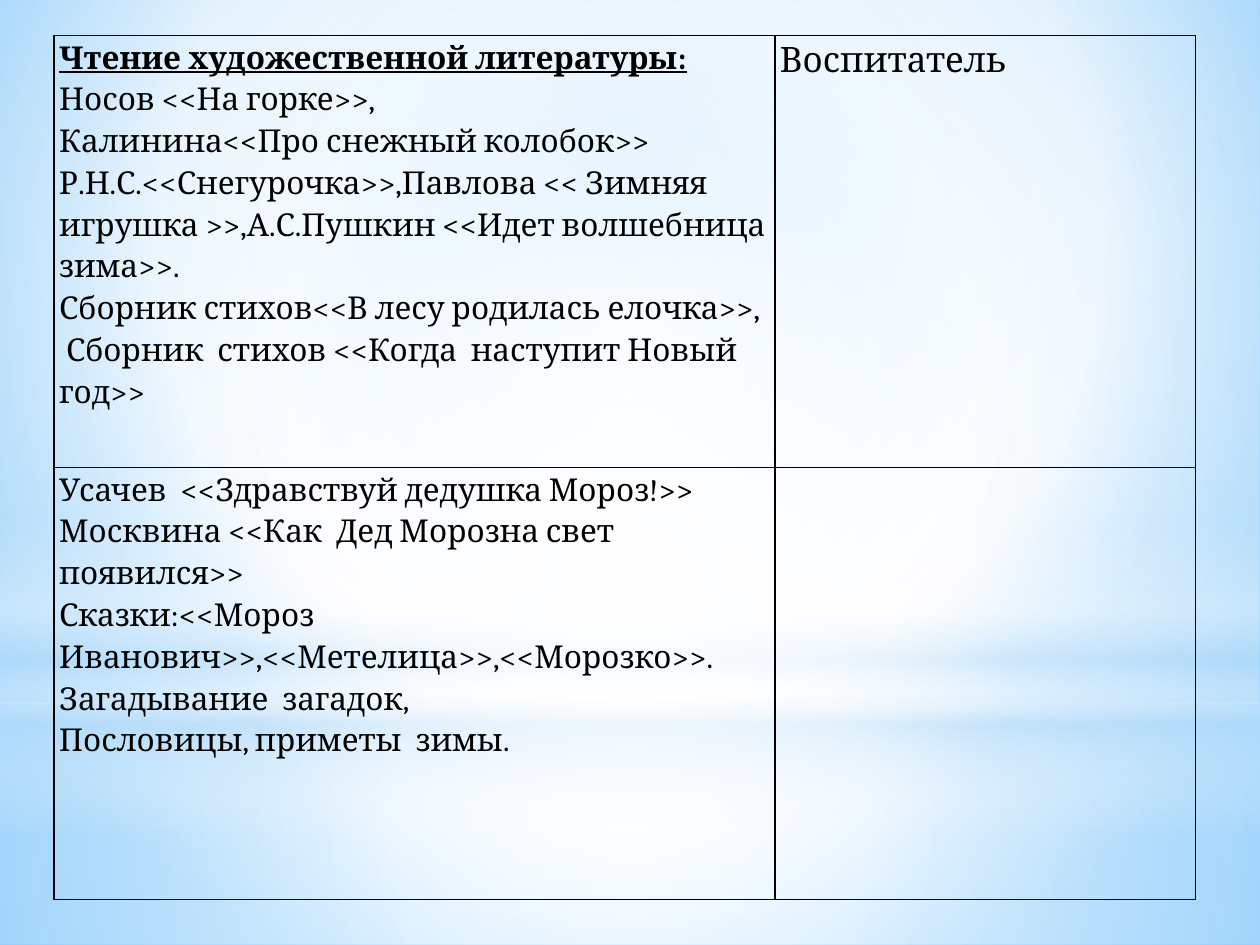
from dataclasses import dataclass

from lxml.etree import SubElement
from pptx import Presentation
from pptx.dml.color import RGBColor
from pptx.enum.shapes import MSO_SHAPE
from pptx.oxml.ns import qn
from pptx.util import Inches, Pt


@dataclass(frozen=True)
class Theme:
    font: str = "Cambria"
    body_size: int = 18
    role_size: int = 20
    ink: str = "000000"
    white: str = "FFFFFF"
    haze: str = "B4DCFA"
    sky: str = "9ED5FF"
    deep_sky: str = "5BB9FF"
    border_width: int = 1


THEME = Theme()
CENTRE = (50, 50, 50, 50)

READING_HEADING = "Чтение художественной литературы:"
READING_LIST = [
    READING_HEADING,
    "Носов <<На горке>>,",
    "Калинина<<Про снежный колобок>>",
    "Р.Н.С.<<Снегурочка>>,Павлова << Зимняя игрушка >>,"
    "А.С.Пушкин <<Идет волшебница зима>>.",
    "Сборник стихов<<В лесу родилась елочка>>,",
    " Сборник  стихов <<Когда  наступит Новый  год>>",
]
TALES_LIST = [
    "Усачев  <<Здравствуй дедушка Мороз!>>",
    "Москвина <<Как  Дед Морозна свет появился>>",
    "Сказки:<<Мороз Иванович>>,<<Метелица>>,<<Морозко>>.",
    "Загадывание  загадок,",
    "Пословицы, приметы  зимы.",
]


def set_gradient(fill, owner, stops, focus=None):
    """Fill owner with (position, colour, opacity) stops, in percent.

    With a focus rectangle the gradient is circular, otherwise it runs downwards.
    """
    fill.gradient()
    gradient = owner.find(qn("a:gradFill"))
    for child in list(gradient):
        gradient.remove(child)
    stop_list = SubElement(gradient, qn("a:gsLst"))
    for position, colour, opacity in stops:
        stop = SubElement(stop_list, qn("a:gs"), pos=str(position * 1000))
        tint = SubElement(stop, qn("a:srgbClr"), val=colour)
        if opacity < 100:
            SubElement(tint, qn("a:alpha"), val=str(opacity * 1000))
    if focus:
        circle = SubElement(gradient, qn("a:path"), {"path": "circle"})
        edges = {side: str(inset * 1000) for side, inset in zip("ltrb", focus)}
        SubElement(circle, qn("a:fillToRect"), edges)
    else:
        SubElement(gradient, qn("a:lin"), ang=str(90 * 60000), scaled="0")


def add_glow(slide, preset, top, height, stops, focus=CENTRE):
    """Add a full-width translucent layer of the sky."""
    glow = slide.shapes.add_shape(
        preset, Inches(0), Inches(top), Inches(10), Inches(height))
    glow.shadow.inherit = False
    glow.line.fill.background()
    set_gradient(glow.fill, glow._element.spPr, stops, focus)


def paint_sky(slide):
    white, haze = THEME.white, THEME.haze
    background_fill = slide.background.fill
    background_fill.solid()
    set_gradient(
        background_fill, slide._element.find(".//" + qn("p:bgPr")),
        [(0, THEME.sky, 100), (60, white, 100), (100, THEME.deep_sky, 100)],
        focus=(20, 10, 20, 60))
    add_glow(slide, MSO_SHAPE.RECTANGLE, 5.58, 1.92,
             [(0, white, 91), (37, white, 76), (100, haze, 79)])
    add_glow(slide, MSO_SHAPE.RECTANGLE, 0, 5.58,
             [(0, white, 89), (48, white, 62), (100, haze, 79)])
    add_glow(slide, MSO_SHAPE.RECTANGLE, 4.12, 2.5,
             [(0, white, 0), (29, white, 30), (45, haze, 40),
              (55, white, 26), (65, haze, 60), (100, white, 0)], focus=None)
    add_glow(slide, MSO_SHAPE.OVAL, 1.75, 5.58,
             [(0, white, 100), (56, white, 0)])


def add_borders(cell):
    properties = cell._tc.get_or_add_tcPr()
    for index, side in enumerate(("lnL", "lnR", "lnT", "lnB")):
        border = SubElement(properties, qn(f"a:{side}"),
                            w=str(Pt(THEME.border_width)))
        solid = SubElement(border, qn("a:solidFill"))
        SubElement(solid, qn("a:srgbClr"), val=THEME.ink)
        properties.insert(index, border)


def fill_cell(cell, lines, size):
    cell.margin_left = cell.margin_right = Inches(0.04)
    cell.margin_top = cell.margin_bottom = Inches(0)
    cell.fill.background()
    add_borders(cell)
    cell.text = "\n".join(lines)
    for paragraph in cell.text_frame.paragraphs:
        paragraph.line_spacing = 1.15
        font = paragraph.font
        font.name = THEME.font
        font.size = Pt(size)
        font.color.rgb = RGBColor.from_string(THEME.ink)
        font.bold = font.underline = paragraph.text == READING_HEADING


def add_plan(slide):
    plan = slide.shapes.add_table(
        2, 2, Inches(0.43), Inches(0.28), Inches(9.06), Inches(6.86)).table
    plan.first_row = plan.horz_banding = False
    for column, width in zip(plan.columns, (5.72, 3.34)):
        column.width = Inches(width)
    for row in plan.rows:
        row.height = Inches(3.43)
    contents = [[READING_LIST, ["Воспитатель"]], [TALES_LIST, []]]
    sizes = (THEME.body_size, THEME.role_size)
    for row, row_contents in zip(plan.rows, contents):
        for cell, lines, size in zip(row.cells, row_contents, sizes):
            fill_cell(cell, lines, size)


def main():
    presentation = Presentation()
    presentation.slide_width = Inches(10)
    presentation.slide_height = Inches(7.5)
    slide = presentation.slides.add_slide(presentation.slide_layouts[6])
    paint_sky(slide)
    add_plan(slide)
    presentation.save("out.pptx")


if __name__ == "__main__":
    main()
